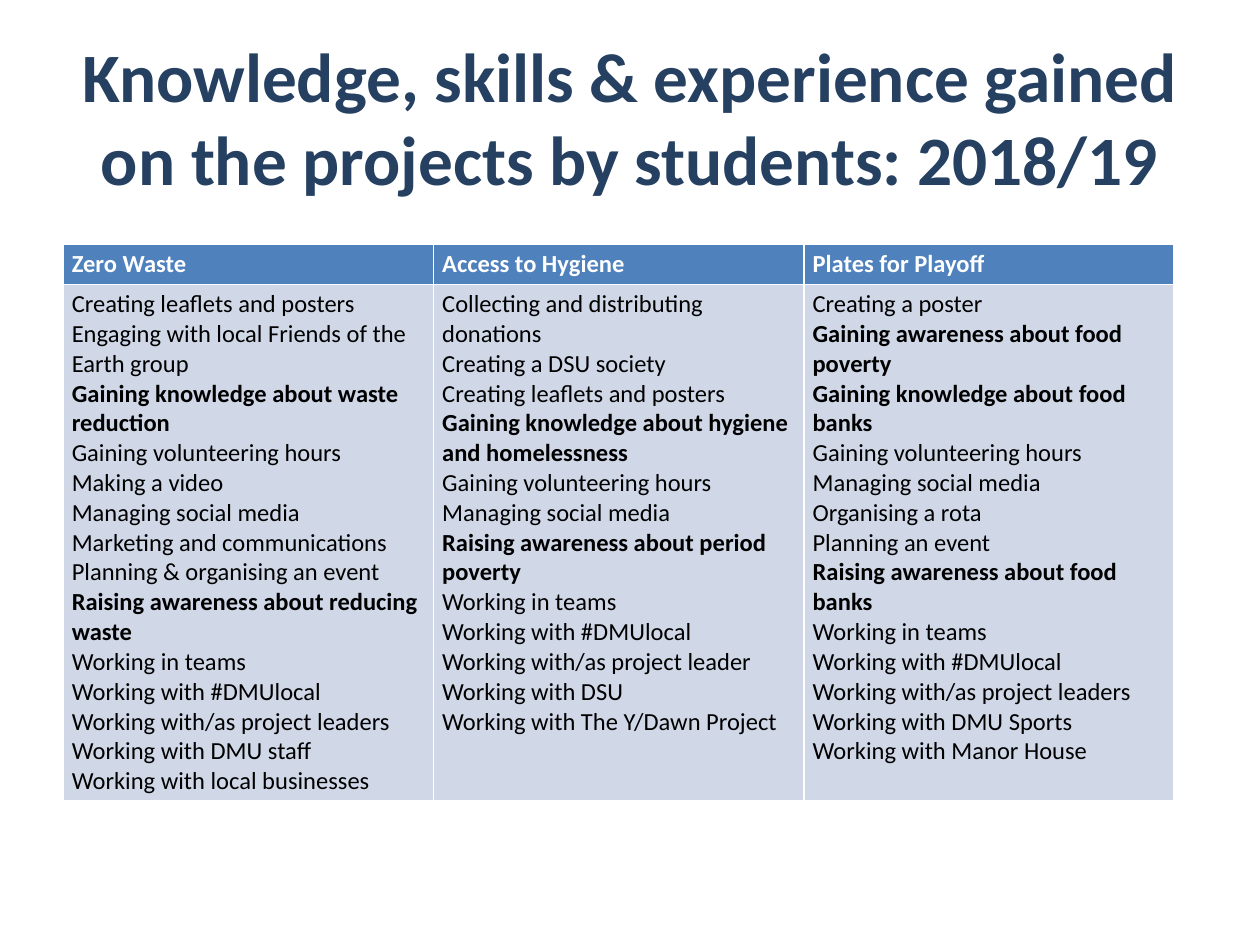
"""Build a slide with a table of what students gained on three projects."""
from pptx import Presentation
from pptx.dml.color import RGBColor
from pptx.enum.text import MSO_ANCHOR, MSO_AUTO_SIZE, PP_ALIGN
from pptx.util import Inches, Pt

MIDDLE = MSO_ANCHOR.MIDDLE
NO_AUTOFIT = MSO_AUTO_SIZE.NONE
CENTER = PP_ALIGN.CENTER

TITLE = "Knowledge, skills & experience gained on the projects by students: 2018/19"
PROJECTS = {
    "Zero Waste": [
        "Creating leaflets and posters",
        "Engaging with local Friends of the Earth group",
        "Gaining knowledge about waste reduction",
        "Gaining volunteering hours",
        "Making a video",
        "Managing social media",
        "Marketing and communications",
        "Planning & organising an event",
        "Raising awareness about reducing waste",
        "Working in teams",
        "Working with #DMUlocal",
        "Working with/as project leaders",
        "Working with DMU staff",
        "Working with local businesses",
    ],
    "Access to Hygiene": [
        "Collecting and distributing donations",
        "Creating a DSU society",
        "Creating leaflets and posters",
        "Gaining knowledge about hygiene and homelessness",
        "Gaining volunteering hours",
        "Managing social media",
        "Raising awareness about period poverty",
        "Working in teams",
        "Working with #DMUlocal",
        "Working with/as project leader",
        "Working with DSU",
        "Working with The Y/Dawn Project",
    ],
    "Plates for Playoff": [
        "Creating a poster",
        "Gaining awareness about food poverty",
        "Gaining knowledge about food banks",
        "Gaining volunteering hours",
        "Managing social media",
        "Organising a rota",
        "Planning an event",
        "Raising awareness about food banks",
        "Working in teams",
        "Working with #DMUlocal",
        "Working with/as project leaders",
        "Working with DMU Sports",
        "Working with Manor House",
    ],
}
KEY_PHRASES = ("knowledge about", "awareness about")

THEME = {
    "font": "Calibri",
    "title_size": 39.6,
    "table_size": 14,
    "title": "254061",
    "header_text": "FFFFFF",
    "body_text": "000000",
    "header_fill": "4F81BD",
    "body_fill": "D0D8E8",
}
COLUMN_WIDTH = 2.94
ROW_HEIGHTS = (0.3, 4.05)


def style_font(para, size, color, bold):
    font = para.font
    font.name = THEME["font"]
    font.size = Pt(THEME[size])
    font.color.rgb = RGBColor.from_string(THEME[color])
    font.bold = bold


def add_title(page):
    title = page.shapes.title
    title.left, title.top = Inches(0.5), Inches(0.3)
    title.width, title.height = Inches(9), Inches(1.25)
    frame = title.text_frame
    frame.text = TITLE
    frame.word_wrap = True
    frame.auto_size = NO_AUTOFIT
    frame.vertical_anchor = MIDDLE
    para = frame.paragraphs[0]
    para.alignment = CENTER
    style_font(para, "title_size", "title", True)


def fill_cell(cell, lines, part, is_bold):
    cell.fill.solid()
    cell.fill.fore_color.rgb = RGBColor.from_string(THEME[f"{part}_fill"])
    cell.margin_left = cell.margin_right = Inches(0.07)
    cell.margin_top = cell.margin_bottom = Inches(0.04)
    cell.text_frame.text = "\n".join(lines)
    for para in cell.text_frame.paragraphs:
        style_font(para, "table_size", f"{part}_text", is_bold(para.text))


def is_key_line(line):
    return any(phrase in line for phrase in KEY_PHRASES)


def add_project_table(page):
    table = page.shapes.add_table(
        len(ROW_HEIGHTS), len(PROJECTS), Inches(0.5), Inches(1.94),
        Inches(COLUMN_WIDTH * len(PROJECTS)), Inches(sum(ROW_HEIGHTS))).table
    for row, height in zip(table.rows, ROW_HEIGHTS):
        row.height = Inches(height)
    for index, (project, gains) in enumerate(PROJECTS.items()):
        table.columns[index].width = Inches(COLUMN_WIDTH)
        fill_cell(table.cell(0, index), [project], "header", lambda line: True)
        fill_cell(table.cell(1, index), gains, "body", is_key_line)


def main():
    deck = Presentation()
    deck.slide_width, deck.slide_height = Inches(10), Inches(7.5)
    page = deck.slides.add_slide(deck.slide_layouts.get_by_name("Title Only"))
    add_title(page)
    add_project_table(page)
    deck.save("out.pptx")


if __name__ == "__main__":
    main()
